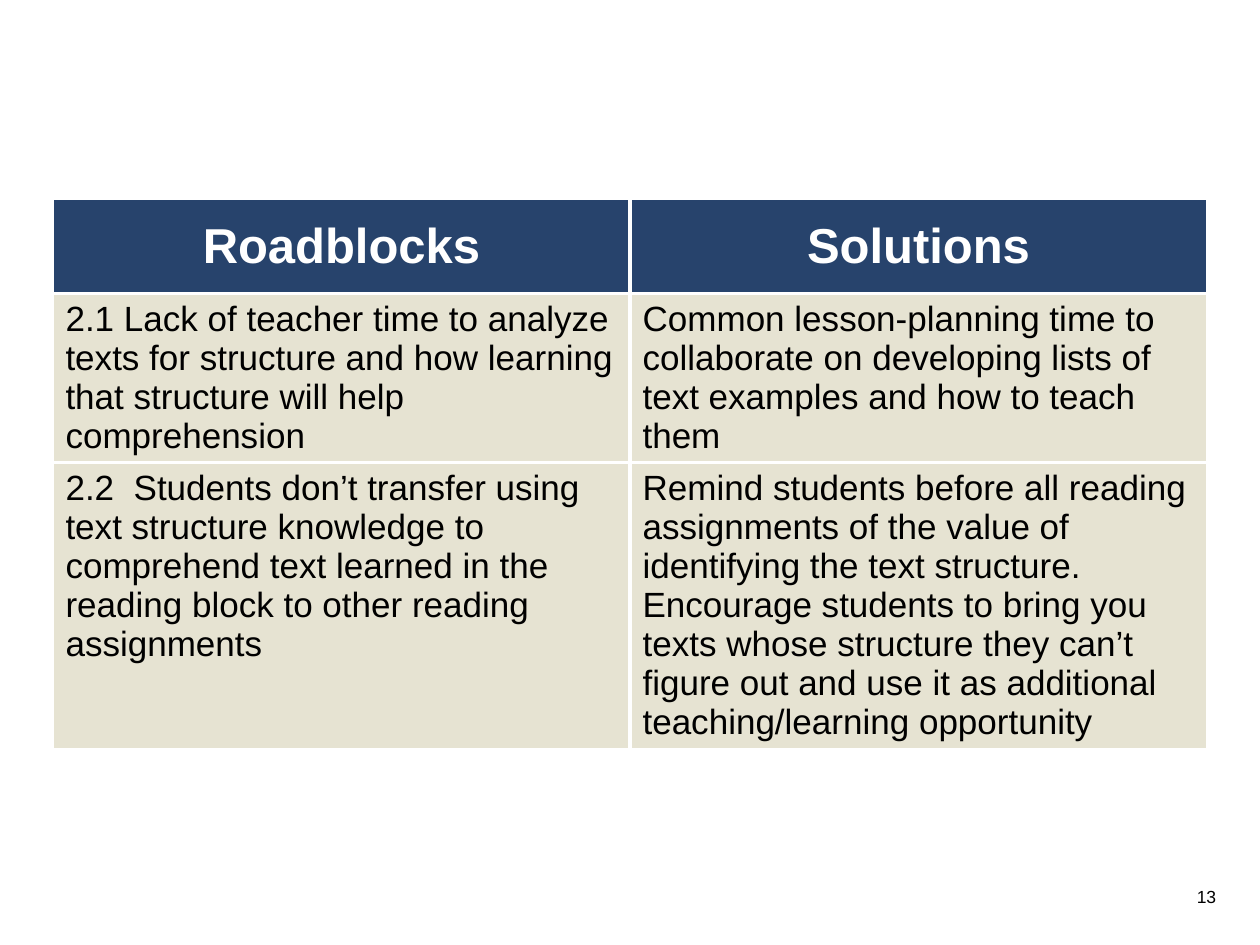
"""Build a slide with a table of teaching roadblocks and their solutions."""
from dataclasses import dataclass

import lxml.etree
import pptx
import pptx.dml.color
import pptx.enum.text
import pptx.oxml.ns
import pptx.util

Inches = pptx.util.Inches
Align = pptx.enum.text.PP_ALIGN
Anchor = pptx.enum.text.MSO_ANCHOR
RGBColor = pptx.dml.color.RGBColor
NAVY = RGBColor(0x27, 0x43, 0x6C)
SAND = RGBColor(0xE6, 0xE3, 0xD2)
WHITE = RGBColor(0xFF, 0xFF, 0xFF)
BLACK = RGBColor(0x00, 0x00, 0x00)
OUTER_WIDTH = pptx.util.Pt(1)
INNER_WIDTH = pptx.util.Pt(2.25)


@dataclass(frozen=True)
class Row:
    height: float
    roadblock: str
    solution: str


@dataclass(frozen=True)
class RowStyle:
    fill: RGBColor
    color: RGBColor
    size: float
    bold: bool
    align: Align
    anchor: Anchor


HEADER = RowStyle(NAVY, WHITE, 28, True, Align.CENTER, Anchor.MIDDLE)
BODY = RowStyle(SAND, BLACK, 20, False, Align.LEFT, Anchor.TOP)

ROWS = (
    Row(0.75, "Roadblocks", "Solutions"),
    Row(
        1.34,
        "2.1 Lack of teacher time to analyze texts for structure and how "
        "learning that structure will help comprehension",
        "Common lesson-planning time to collaborate on developing lists of "
        "text examples and how to teach them",
    ),
    Row(
        2.27,
        "2.2  Students don’t transfer using text structure knowledge to "
        "comprehend text learned in the reading block to other reading "
        "assignments",
        "Remind students before all reading assignments of the value of "
        "identifying the text structure. Encourage students to bring you "
        "texts whose structure they can’t figure out and use it as "
        "additional teaching/learning opportunity",
    ),
)


def write_text(frame, text: str, *, size: float, color: RGBColor,
               bold: bool = False, align: Align = Align.LEFT) -> None:
    paragraph = frame.paragraphs[0]
    paragraph.alignment = align
    span = paragraph.add_run()
    span.text = text
    span.font.name = "Arial"
    span.font.size = pptx.util.Pt(size)
    span.font.bold = bold
    span.font.color.rgb = color


def add_borders(cell, outer_sides: set[str]) -> None:
    qualified = pptx.oxml.ns.qn
    properties = cell._tc.get_or_add_tcPr()
    for position, side in enumerate("LRTB"):
        width = OUTER_WIDTH if side in outer_sides else INNER_WIDTH
        line = lxml.etree.Element(qualified(f"a:ln{side}"), w=str(int(width)))
        fill = lxml.etree.SubElement(line, qualified("a:solidFill"))
        lxml.etree.SubElement(fill, qualified("a:srgbClr"), val=str(WHITE))
        properties.insert(position, line)


def add_roadblock_table(page, rows: tuple[Row, ...]) -> None:
    height = sum(row.height for row in rows)
    table = page.shapes.add_table(
        len(rows), 2, Inches(0.42), Inches(1.58), Inches(9.16), Inches(height)
    ).table
    for row_index, row in enumerate(rows):
        table.rows[row_index].height = Inches(row.height)
        style = BODY if row_index else HEADER
        row_sides = {0: {"T"}, len(rows) - 1: {"B"}}.get(row_index, set())
        for column_index, text in enumerate((row.roadblock, row.solution)):
            cell = table.cell(row_index, column_index)
            cell.fill.solid()
            cell.fill.fore_color.rgb = style.fill
            cell.vertical_anchor = style.anchor
            write_text(cell.text_frame, text, size=style.size,
                       color=style.color, bold=style.bold, align=style.align)
            add_borders(cell, row_sides | {"LR"[column_index]})


def add_page_number(page, number: str) -> None:
    box = page.shapes.add_textbox(
        Inches(9.33), Inches(6.98), Inches(0.42), Inches(0.27)
    )
    box.text_frame.word_wrap = True
    box.text_frame.auto_size = pptx.enum.text.MSO_AUTO_SIZE.SHAPE_TO_FIT_TEXT
    write_text(box.text_frame, number, size=10, color=BLACK, align=Align.RIGHT)


def main() -> None:
    deck = pptx.Presentation()
    deck.slide_width, deck.slide_height = Inches(10), Inches(7.5)
    page = deck.slides.add_slide(deck.slide_layouts[6])
    add_roadblock_table(page, ROWS)
    add_page_number(page, "13")
    deck.save("out.pptx")


if __name__ == "__main__":
    main()
